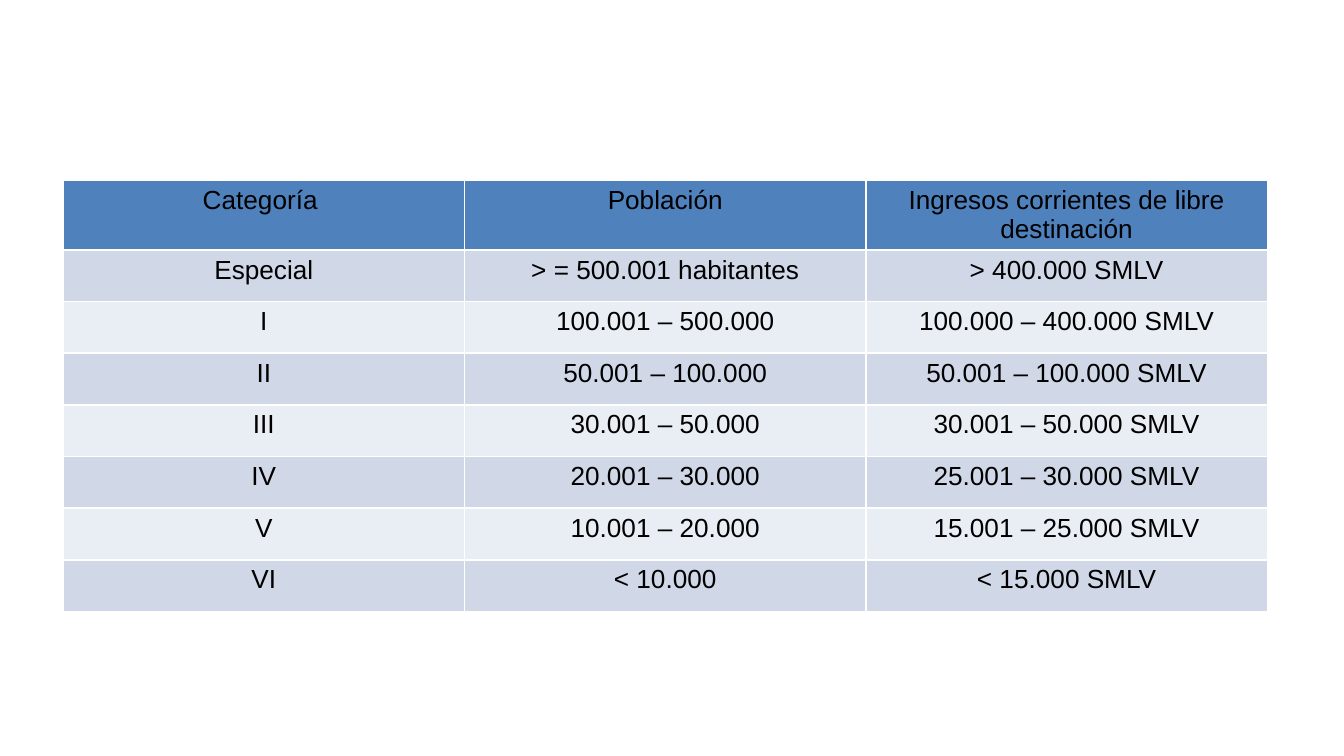
from dataclasses import dataclass

from lxml.etree import SubElement
from pptx import Presentation
from pptx.dml.color import RGBColor
from pptx.enum.text import PP_ALIGN
from pptx.oxml.ns import qn
from pptx.table import _Cell
from pptx.util import Inches, Pt

BLACK = RGBColor(0x00, 0x00, 0x00)
WHITE = RGBColor(0xFF, 0xFF, 0xFF)
BLUE = RGBColor(0x4F, 0x81, 0xBD)
DARK = RGBColor(0xD0, 0xD8, 0xE8)
LIGHT = RGBColor(0xE9, 0xED, 0xF4)

LEFT, TOP, WIDTH = 0.47, 1.34, 8.96
HEAD_H, BODY_H = 0.52, 2.69


@dataclass
class Level:
    name: str
    people: str
    income: str


HEAD = Level("Categoría ", "Población", "Ingresos corrientes de libre destinación")
LEVELS = [
    Level("Especial", "> = 500.001 habitantes", "> 400.000 SMLV"),
    Level("I", "100.001 – 500.000", "100.000 – 400.000 SMLV"),
    Level("II", "50.001 – 100.000", "50.001 – 100.000 SMLV"),
    Level("III", "30.001 – 50.000", "30.001 – 50.000 SMLV"),
    Level("IV", "20.001 – 30.000", "25.001 – 30.000 SMLV"),
    Level("V", "10.001 – 20.000", "15.001 – 25.000 SMLV"),
    Level("VI", "< 10.000", "< 15.000 SMLV"),
]


def add_edges(cell: _Cell) -> None:
    """Give a cell thin white borders, placed before its fill."""
    props = cell._tc.get_or_add_tcPr()
    for spot, tag in enumerate(("a:lnL", "a:lnR", "a:lnT", "a:lnB")):
        line = SubElement(props, qn(tag), w=str(Pt(1)))
        fill = SubElement(line, qn("a:solidFill"))
        SubElement(fill, qn("a:srgbClr"), val=str(WHITE))
        props.insert(spot, line)


def fill_cell(cell: _Cell, text: str, color: RGBColor) -> None:
    cell.fill.solid()
    cell.fill.fore_color.rgb = color
    cell.margin_left = cell.margin_right = Inches(0.07)
    cell.margin_top = cell.margin_bottom = Inches(0.04)
    add_edges(cell)
    para = cell.text_frame.paragraphs[0]
    para.text = text
    para.alignment = PP_ALIGN.CENTER
    for run in para.runs:
        run.font.name = "Arial"
        run.font.size = Pt(14)
        run.font.bold = False
        run.font.color.rgb = BLACK


def main() -> None:
    # Widescreen page, 16 to 9
    deck = Presentation()
    deck.slide_width = Inches(10)
    deck.slide_height = Inches(10 * 9 / 16)
    slide = deck.slides.add_slide(deck.slide_layouts[6])

    # Table grid
    rows = [HEAD, *LEVELS]
    table = slide.shapes.add_table(
        len(rows), 3, Inches(LEFT), Inches(TOP),
        Inches(WIDTH), Inches(HEAD_H + BODY_H)).table
    for col in table.columns:
        col.width = Inches(WIDTH / 3)
    for row in table.rows:
        row.height = Inches(BODY_H / len(LEVELS))
    table.rows[0].height = Inches(HEAD_H)

    # Header and banded rows
    for i, level in enumerate(rows):
        color = BLUE if i == 0 else DARK if i % 2 else LIGHT
        for j, text in enumerate((level.name, level.people, level.income)):
            fill_cell(table.cell(i, j), text, color)

    deck.save("out.pptx")


if __name__ == "__main__":
    main()
